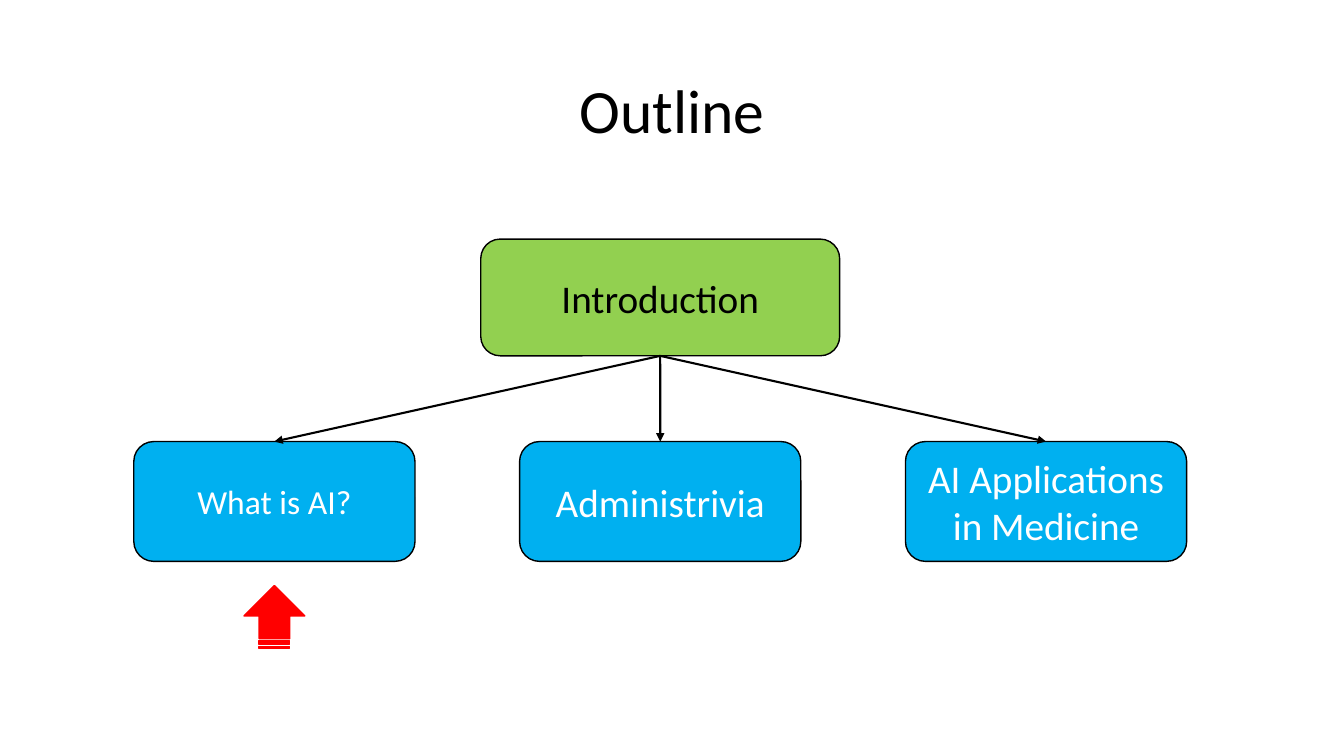
import pptx
import pptx.util
import pptx.dml.color
import pptx.enum.shapes
import pptx.enum.text
import pptx.oxml.ns
import lxml.etree

Pt = pptx.util.Pt
RGBColor = pptx.dml.color.RGBColor
SHAPES = pptx.enum.shapes.MSO_SHAPE

BLACK = RGBColor(0x00, 0x00, 0x00)
WHITE = RGBColor(0xFF, 0xFF, 0xFF)
GREEN = RGBColor(0x92, 0xD0, 0x50)
BLUE = RGBColor(0x00, 0xB0, 0xF0)
RED = RGBColor(0xFF, 0x00, 0x00)

TITLE = "Outline"
ROOT = "Introduction"
TOPICS = [("What is AI?", 24), ("Administrivia", 28), ("AI Applications in Medicine", 28)]

SLIDE_SIZE = (960, 540)
TITLE_BOX = (66, 28.8, 828, 104.4)
CENTER = 471.6
ROOT_TOP, ROOT_WIDTH, ROOT_HEIGHT = 170.8, 256.4, 83.4
TOPIC_TOP, TOPIC_WIDTH, TOPIC_HEIGHT = 315.4, 200.9, 85.6
TOPIC_STEP = 275.6
MARKER_WIDTH, MARKER_HEIGHT, MARKER_MIDDLE = 44.8, 43.4, 440.6


def write_text(shape, text, size, color, line_spacing=1.0):
    frame = shape.text_frame
    frame.word_wrap = True
    frame.vertical_anchor = pptx.enum.text.MSO_ANCHOR.MIDDLE
    paragraph = frame.paragraphs[0]
    paragraph.text = text
    paragraph.alignment = pptx.enum.text.PP_ALIGN.CENTER
    paragraph.line_spacing = line_spacing
    font = paragraph.runs[0].font
    font.color.rgb = color
    for name, value in {"name": "Calibri", "size": Pt(size)}.items():
        setattr(font, name, value)


def add_filled(slide, kind, box, fill, line):
    shape = slide.shapes.add_shape(kind, *map(Pt, box))
    shape.shadow.inherit = False
    shape.fill.solid()
    shape.fill.fore_color.rgb = fill
    shape.line.color.rgb = line
    shape.line.width = Pt(1)
    return shape


def add_arrow(slide, parent, child):
    """Join the bottom of parent to the top of child with an arrow."""
    connector = slide.shapes.add_connector(pptx.enum.shapes.MSO_CONNECTOR.STRAIGHT, 0, 0, 0, 0)
    connector.begin_connect(parent, 2)
    connector.end_connect(child, 0)
    connector.line.color.rgb = BLACK
    connector.line.width = Pt(1.5)
    qn = pptx.oxml.ns.qn
    properties = connector.line._get_or_add_ln()
    lxml.etree.SubElement(properties, qn("a:tailEnd"), type="triangle")
    lxml.etree.SubElement(connector._element.spPr, qn("a:effectLst"))


def main():
    presentation = pptx.Presentation()
    presentation.slide_width, presentation.slide_height = map(Pt, SLIDE_SIZE)
    slide = presentation.slides.add_slide(presentation.slide_layouts[6])

    write_text(slide.shapes.add_textbox(*map(Pt, TITLE_BOX)), TITLE, 44, BLACK, 0.9)

    root_box = (CENTER - ROOT_WIDTH / 2, ROOT_TOP, ROOT_WIDTH, ROOT_HEIGHT)
    root = add_filled(slide, SHAPES.ROUNDED_RECTANGLE, root_box, GREEN, BLACK)
    write_text(root, ROOT, 28, BLACK)

    topic_centers = [CENTER + (index - 1) * TOPIC_STEP for index in range(len(TOPICS))]
    topics = []
    for center, (text, size) in zip(topic_centers, TOPICS):
        box = (center - TOPIC_WIDTH / 2, TOPIC_TOP, TOPIC_WIDTH, TOPIC_HEIGHT)
        topic = add_filled(slide, SHAPES.ROUNDED_RECTANGLE, box, BLUE, BLACK)
        write_text(topic, text, size, WHITE)
        topics.append(topic)

    for topic in topics:
        add_arrow(slide, root, topic)

    marker_box = (topic_centers[0] - MARKER_WIDTH / 2, MARKER_MIDDLE - MARKER_HEIGHT / 2,
                  MARKER_WIDTH, MARKER_HEIGHT)
    marker = add_filled(slide, SHAPES.STRIPED_RIGHT_ARROW, marker_box, RED, RED)
    marker.rotation = 270

    presentation.save("out.pptx")


if __name__ == "__main__":
    main()
